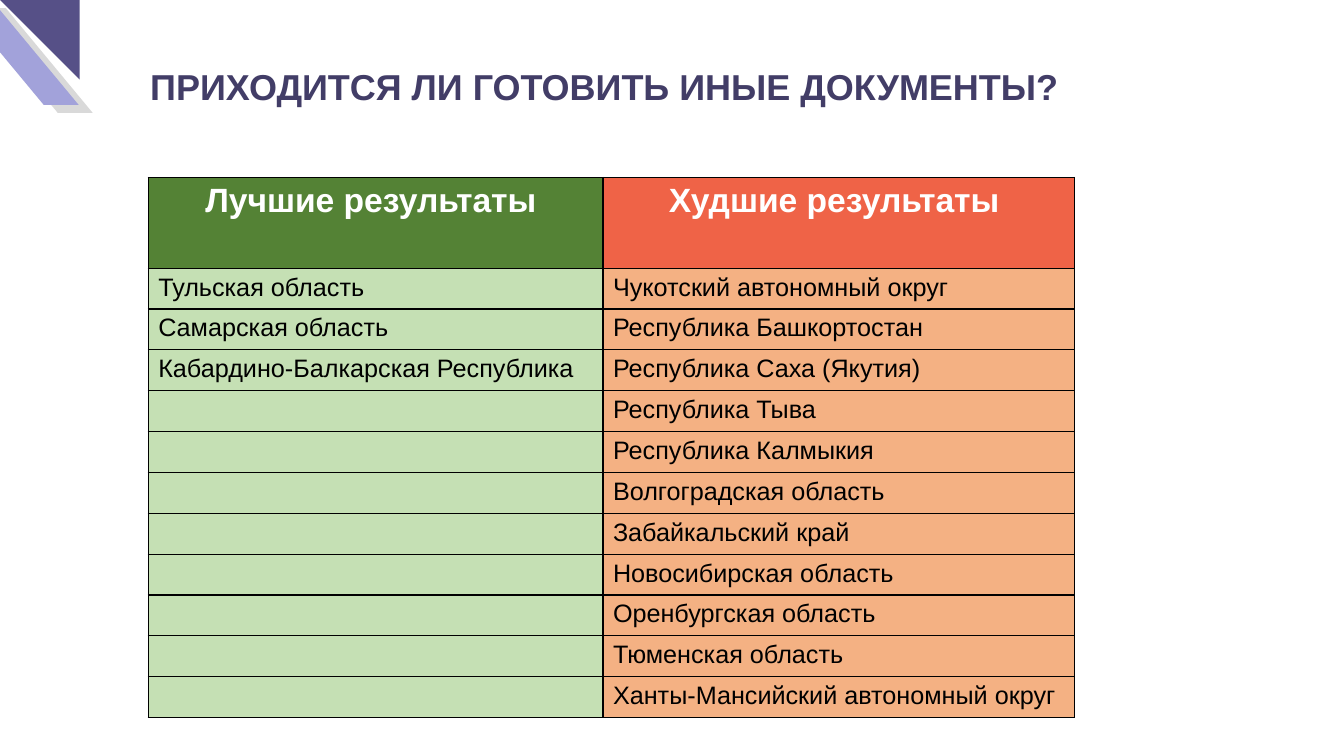
from dataclasses import dataclass
from itertools import zip_longest

from lxml.etree import SubElement
from pptx import Presentation
from pptx.dml.color import RGBColor
from pptx.enum.shapes import MSO_SHAPE
from pptx.enum.text import MSO_ANCHOR, MSO_AUTO_SIZE, PP_ALIGN
from pptx.oxml.ns import qn
from pptx.util import Inches, Pt


@dataclass(frozen=True)
class Theme:
    font: str = "Arial"
    title: str = "423D67"
    dark: str = "565087"
    light: str = "A2A2DA"
    shade: str = "D9D9D9"
    white: str = "FFFFFF"
    black: str = "000000"
    heads: tuple = ("548235", "EF6347")
    cells: tuple = ("C5E0B4", "F4B183")
    title_size: float = 25.7
    head_size: int = 24
    body_size: int = 18


THEME = Theme()
TITLE = "ПРИХОДИТСЯ ЛИ ГОТОВИТЬ ИНЫЕ ДОКУМЕНТЫ?"
HEADS = ("Лучшие результаты ", "Худшие результаты ")
BEST = ("Тульская область", "Самарская область", "Кабардино-Балкарская Республика")
WORST = (
    "Чукотский автономный округ",
    "Республика Башкортостан",
    "Республика Саха (Якутия)",
    "Республика Тыва",
    "Республика Калмыкия",
    "Волгоградская область",
    "Забайкальский край",
    "Новосибирская область",
    "Оренбургская область",
    "Тюменская область",
    "Ханты-Мансийский автономный округ",
)


def paint(item, color):
    item.fill.solid()
    item.fill.fore_color.rgb = RGBColor.from_string(color)


def write(frame, text, *, size, color, bold=False, align=PP_ALIGN.LEFT):
    para = frame.paragraphs[0]
    para.alignment = align
    if not text:
        return
    run = para.add_run()
    run.text = text
    run.font.name = THEME.font
    run.font.size = Pt(size)
    run.font.bold = bold
    run.font.color.rgb = RGBColor.from_string(color)


def add_shape(slide, kind, box, color):
    shape = slide.shapes.add_shape(kind, *map(Inches, box))
    shape.shadow.inherit = False
    shape.line.fill.background()
    paint(shape, color)
    return shape


def add_band(slide, left, top, color):
    band = add_shape(slide, MSO_SHAPE.PARALLELOGRAM, (left, top, 1.21, 1.04), color)
    band.adjustments[0] = 0.83
    band._element.spPr.find(qn("a:xfrm")).set("flipH", "1")


def add_corner(slide):
    add_band(slide, -0.29, 0.08, THEME.shade)
    add_band(slide, -0.43, 0, THEME.light)
    corner = add_shape(slide, MSO_SHAPE.RIGHT_TRIANGLE, (0, 0, 0.79, 0.79), THEME.dark)
    corner.rotation = 180


def add_title(slide):
    title = slide.shapes.title
    title.left, title.top = Inches(1.39), Inches(0.59)
    title.width, title.height = Inches(9.57), Inches(0.53)
    frame = title.text_frame
    frame.word_wrap = True
    frame.auto_size = MSO_AUTO_SIZE.NONE
    frame.vertical_anchor = MSO_ANCHOR.MIDDLE
    write(frame, TITLE, size=THEME.title_size, color=THEME.title, bold=True)


def frame_cell(cell):
    props = cell._tc.get_or_add_tcPr()
    for side in ("lnL", "lnR", "lnT", "lnB"):
        line = SubElement(props, qn(f"a:{side}"), w=str(Pt(1)))
        fill = SubElement(line, qn("a:solidFill"))
        SubElement(fill, qn("a:srgbClr"), val=THEME.black)


def fill_row(row, texts, fills, **style):
    for cell, text, color in zip(row.cells, texts, fills):
        frame_cell(cell)
        paint(cell, color)
        write(cell.text_frame, text, **style)


def add_table(slide):
    pairs = list(zip_longest(BEST, WORST, fillvalue=""))
    box = map(Inches, (1.47, 1.76, 9.19, 5.36))
    table = slide.shapes.add_table(len(pairs) + 1, 2, *box).table
    for column, width in zip(table.columns, (4.51, 4.68)):
        column.width = Inches(width)
    head, *body = table.rows
    head.height = Inches(0.9)
    fill_row(head, HEADS, THEME.heads, size=THEME.head_size,
             color=THEME.white, bold=True, align=PP_ALIGN.CENTER)
    for row, pair in zip(body, pairs):
        row.height = Inches(4.46 / len(pairs))
        fill_row(row, pair, THEME.cells, size=THEME.body_size, color=THEME.black)


def main():
    deck = Presentation()
    deck.slide_width, deck.slide_height = Inches(13.33), Inches(7.5)
    slide = deck.slides.add_slide(deck.slide_layouts[5])
    paint(slide.background, THEME.white)
    add_corner(slide)
    add_table(slide)
    add_title(slide)
    deck.save("out.pptx")


if __name__ == "__main__":
    main()
